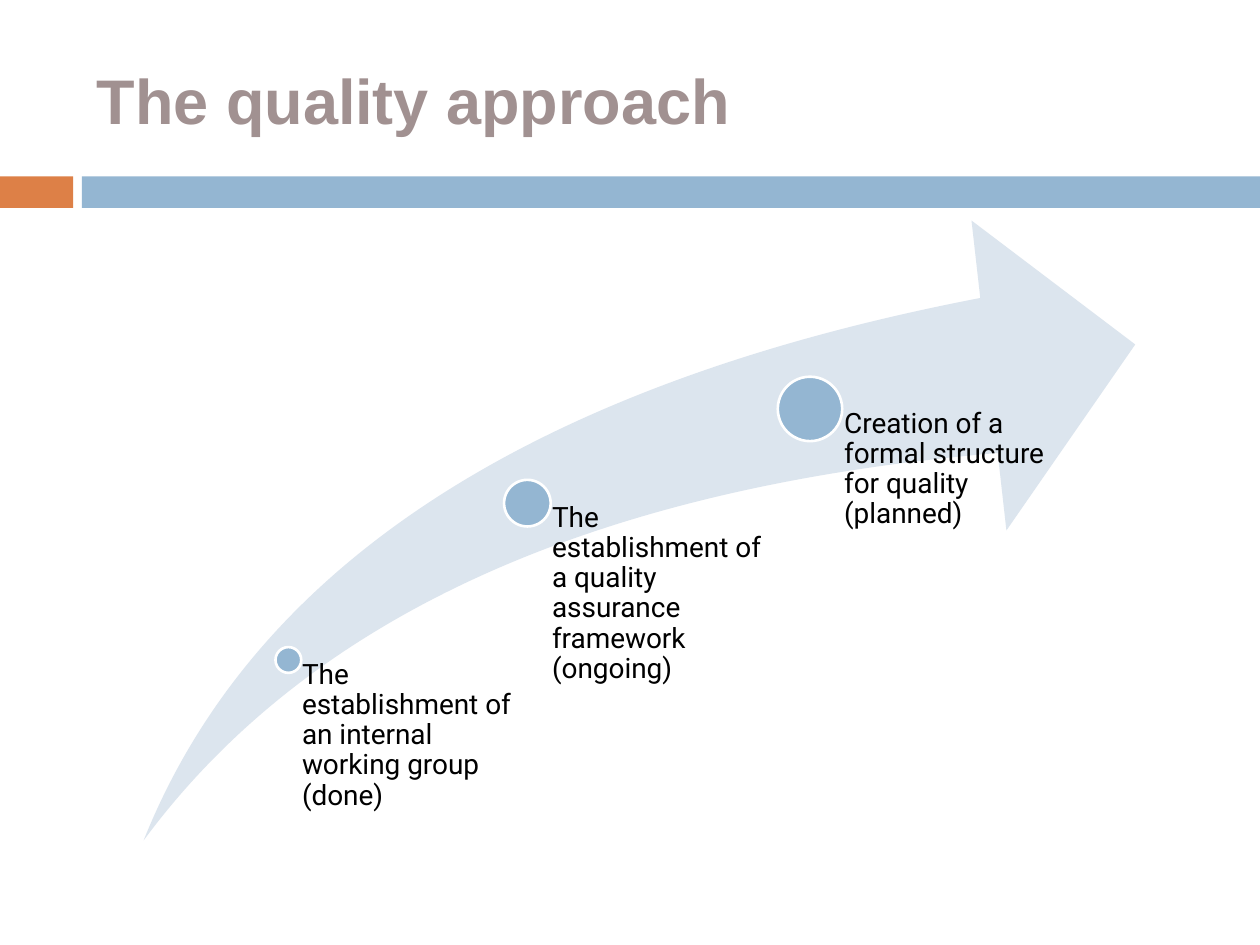
import collections

import pptx
import pptx.dml.color
import pptx.enum.shapes
import pptx.enum.text
import pptx.util

COLORS = {
    "accent": "DD8047",
    "blue": "94B6D2",
    "arrow": "DCE5EE",
    "title": "A19191",
    "text": "000000",
    "white": "FFFFFF",
}
SHAPES = pptx.enum.shapes.MSO_SHAPE
Box = collections.namedtuple("Box", "left top width height")
Milestone = collections.namedtuple("Milestone", "text across down diameter text_width")

# Percentages of the arrow's box; diameter and text width refer to its width.
MILESTONES = [
    Milestone("The establishment of an internal working group (done)", 14.6, 70.9, 2.6, 23.3),
    Milestone("The establishment of a quality assurance framework (ongoing)", 38.7, 45.6, 4.7, 24),
    Milestone("Creation of a formal structure for quality (planned)", 67.2, 30.4, 6.5, 24),
]


def color(name):
    return pptx.dml.color.RGBColor.from_string(COLORS[name])


def inches(box):
    return [pptx.util.Inches(length) for length in box]


def add_filled_shape(slide, kind, box, fill, outline=None):
    shape = slide.shapes.add_shape(kind, *inches(box))
    shape.shadow.inherit = False
    shape.fill.solid()
    shape.fill.fore_color.rgb = color(fill)
    if outline:
        shape.line.color.rgb = color(outline)
        shape.line.width = pptx.util.Pt(1.5)
    else:
        shape.line.fill.background()
    return shape


def add_text(slide, box, text, font_name, size, font_color):
    frame = slide.shapes.add_textbox(*inches(box)).text_frame
    frame.word_wrap = True
    paragraph = frame.paragraphs[0]
    paragraph.text = text
    paragraph.font.name = font_name
    paragraph.font.size = pptx.util.Pt(size)
    paragraph.font.color.rgb = color(font_color)
    return frame


def add_title(slide, box):
    frame = add_text(slide, box, "The quality approach", "Arial", 36, "title")
    frame.vertical_anchor = pptx.enum.text.MSO_ANCHOR.MIDDLE
    frame.paragraphs[0].font.bold = True


def add_band(slide, box):
    accent_width = box.width * 0.058
    bar_offset = box.width * 0.065
    add_filled_shape(slide, SHAPES.RECTANGLE, box._replace(width=accent_width), "accent")
    bar = box._replace(left=box.left + bar_offset, width=box.width - bar_offset)
    add_filled_shape(slide, SHAPES.RECTANGLE, bar, "blue")


def add_milestone(slide, box, milestone):
    center_x = box.left + box.width * milestone.across / 100
    center_y = box.top + box.height * milestone.down / 100
    diameter = box.width * milestone.diameter / 100
    circle = Box(center_x - diameter / 2, center_y - diameter / 2, diameter, diameter)
    add_filled_shape(slide, SHAPES.OVAL, circle, "blue", "white")

    label = Box(center_x, center_y, box.width * milestone.text_width / 100,
                box.top + box.height - center_y)
    frame = add_text(slide, label, milestone.text, "Roboto", 16, "text")
    frame.margin_left = pptx.util.Inches(diameter * 0.53)
    frame.margin_top = frame.margin_right = frame.margin_bottom = 0
    frame.paragraphs[0].line_spacing = 0.9


def add_roadmap(slide, box):
    arrow = add_filled_shape(slide, SHAPES.SWOOSH_ARROW, box, "arrow")
    arrow.adjustments[0] = 0.25
    arrow.adjustments[1] = 0.25
    for milestone in MILESTONES:
        add_milestone(slide, box, milestone)


def main():
    presentation = pptx.Presentation()
    presentation.slide_width = pptx.util.Inches(10)
    presentation.slide_height = pptx.util.Inches(7.5)
    slide = presentation.slides.add_slide(presentation.slide_layouts[6])
    add_band(slide, Box(0, 1.4, 10, 0.25))
    add_title(slide, Box(0.67, 0.25, 8.92, 1.08))
    add_roadmap(slide, Box(1.14, 1.75, 7.87, 4.92))
    presentation.save("out.pptx")


if __name__ == "__main__":
    main()
